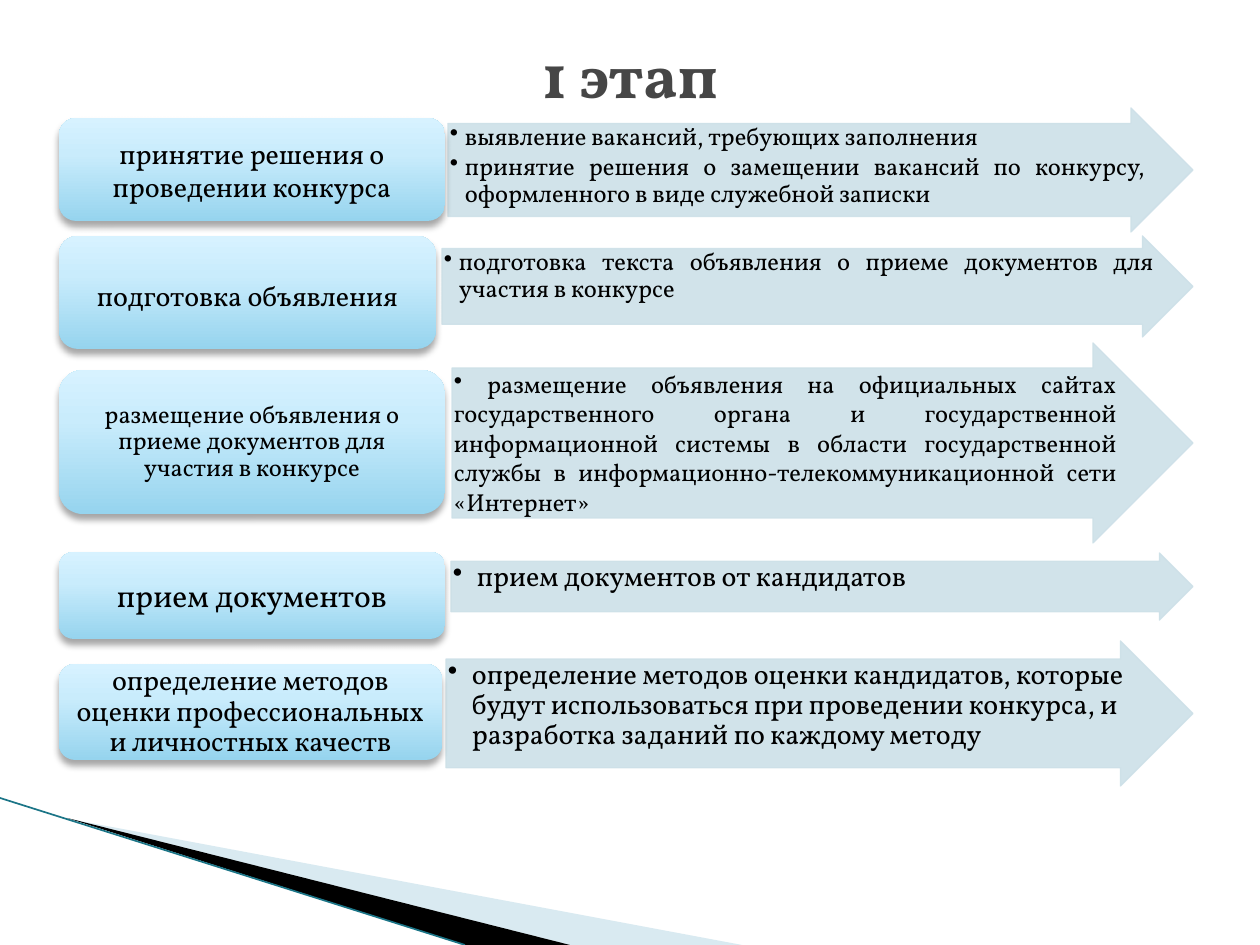
import pptx
import pptx.util
import pptx.dml.color
import pptx.enum.shapes
import pptx.enum.text
import pptx.oxml
from pptx.oxml.ns import nsdecls

PX = 914400 // 126
SLIDE = (1260, 945)
LEFT, RIGHT = 59, 1193  # shared left edge of labels, shared tip of arrows

THEME = dict(
    font="Vollkorn", text="000000", title="464646", title_size=36,
    arrow="CDE0E8", arrow_alpha=90,
    gradient=[(0, "96D4EE"), (65, "C9ECFC"), (100, "D7F2FF")],
    pale="A0CBDC", pale_alpha=40, dark="000000", edge="1B7587",
)

TITLE = "1 этап"
# label: text, size, top, width, height, line spacing, extra top inset
# arrow: paragraphs, size, left, top, height, hanging indent, line spacing, justified
STAGES = [
    (("принятие решения о проведении конкурса", 16, 118, 386, 103, 1, 1),
     (["выявление вакансий, требующих заполнения",
       "принятие решения о замещении вакансий по конкурсу, "
       "оформленного в виде служебной записки"], 14, 448, 108, 124, 15, 0.9, True)),
    (("подготовка объявления", 16, 236, 377, 113, 1, 5),
     (["подготовка текста объявления о приеме документов для участия в конкурсе"],
      14, 442, 236, 101, 15, 0.9, True)),
    (("размещение объявления о приеме документов для участия в конкурсе",
      14, 370, 386, 144, 0.9, 0),
     ([" размещение объявления на официальных сайтах государственного органа и "
       "государственной информационной системы в области государственной службы "
       "в информационно-телекоммуникационной сети «Интернет»"],
      14, 452, 343, 200, 0, 1, True)),
    (("прием документов", 18, 552, 386, 87, 0.9, 4),
     (["прием документов от кандидатов"], 16, 451, 553, 67, 24, 0.9, False)),
    (("определение методов оценки профессиональных и личностных качеств",
      16, 664, 383, 96, 0.9, 0),
     (["определение методов оценки кандидатов, которые будут использоваться "
       "при проведении конкурса, и разработка заданий по каждому методу"],
      16, 446, 641, 145, 24, 0.9, False)),
]
WEDGES = [
    ([(69, 819), (742, 945), (570, 945)], THEME["pale"], THEME["pale_alpha"]),
    ([(67, 818), (570, 945), (465, 945)], THEME["dark"], 100),
]
EDGE_LINE = [(0, 798), (465, 945)]

ALIGN = pptx.enum.text.PP_ALIGN
ANCHOR = pptx.enum.text.MSO_ANCHOR
SHAPE = pptx.enum.shapes.MSO_SHAPE


def emu(*values):
    return [round(v * PX) for v in values]


def rgb(code):
    return pptx.dml.color.RGBColor.from_string(code)


def xml(text):
    return pptx.oxml.parse_xml(text.replace(">", f" {nsdecls('a')}>", 1))


def paint(fill, color, alpha=100):
    fill.solid()
    fill.fore_color.rgb = rgb(color)
    if alpha < 100:
        clr = fill._xPr.find(".//" + pptx.oxml.ns.qn("a:srgbClr"))
        clr.append(xml(f'<a:alpha val="{alpha * 1000}"></a:alpha>'))


def write(sp, texts, size, color, insets, anchor, para, bold=False, hang=None):
    """Fill a frame; hang is the bullet indent in px, None for no bullets."""
    tf = sp.text_frame
    frame = dict(zip(("margin_left", "margin_top", "margin_right", "margin_bottom"),
                     emu(*insets)))
    for name, value in dict(frame, word_wrap=True, vertical_anchor=anchor).items():
        setattr(tf, name, value)
    for i, text in enumerate(texts):
        p = tf.add_paragraph() if i else tf.paragraphs[0]
        for name, value in para.items():
            setattr(p, name, value)
        if hang is not None:
            pPr = p._p.get_or_add_pPr()
            pPr.set("marL", str(hang * PX))
            pPr.set("indent", str(-hang * PX))
            pPr.append(xml('<a:buChar char="•"></a:buChar>'))
        r = p.add_run()
        r.text = text
        font = dict(name=THEME["font"], size=pptx.util.Pt(size), bold=bold)
        for name, value in font.items():
            setattr(r.font, name, value)
        r.font.color.rgb = rgb(color)


def add_arrow(s, texts, size, left, top, height, hang, spacing, justified):
    sp = s.shapes.add_shape(SHAPE.RIGHT_ARROW, *emu(left, top, RIGHT - left, height))
    sp.shadow.inherit = False
    sp.adjustments[0], sp.adjustments[1] = 0.75, 0.5
    paint(sp.fill, THEME["arrow"], THEME["arrow_alpha"])
    paint(sp.line.fill, THEME["arrow"], THEME["arrow_alpha"])
    sp.line.width = pptx.util.Pt(0.75)
    para = dict(alignment=ALIGN.JUSTIFY if justified else ALIGN.LEFT,
                line_spacing=spacing, space_after=pptx.util.Pt(2))
    write(sp, texts, size, THEME["text"], (2, 1, 1, 1), ANCHOR.TOP, para, hang=hang)


def add_label(s, text, size, top, width, height, spacing, drop):
    sp = s.shapes.add_shape(SHAPE.ROUNDED_RECTANGLE, *emu(LEFT, top, width, height))
    stops = "".join(f'<a:gs pos="{pos * 1000}"><a:srgbClr val="{c}"/></a:gs>'
                    for pos, c in THEME["gradient"])
    spPr = sp._element.spPr
    spPr.append(xml(f'<a:gradFill rotWithShape="1"><a:gsLst>{stops}</a:gsLst>'
                    '<a:lin ang="16200000" scaled="0"/></a:gradFill>'))
    sp.line.fill.background()
    spPr.append(xml('<a:effectLst><a:outerShdw blurRad="50800" dist="38100" '
                    'dir="5400000" rotWithShape="0"><a:srgbClr val="000000">'
                    '<a:alpha val="35000"/></a:srgbClr></a:outerShdw></a:effectLst>'))
    write(sp, [text], size, THEME["text"], (8, 4 + drop, 8, 4), ANCHOR.MIDDLE,
          dict(alignment=ALIGN.CENTER, line_spacing=spacing))


def add_corner(s):
    for points, color, alpha in WEDGES:
        fb = s.shapes.build_freeform(*points[0], scale=PX)
        fb.add_line_segments(points[1:], close=True)
        sp = fb.convert_to_shape()
        sp.shadow.inherit = False
        paint(sp.fill, color, alpha)
        sp.line.fill.background()
    (x1, y1), (x2, y2) = EDGE_LINE
    line = s.shapes.add_connector(pptx.enum.shapes.MSO_CONNECTOR.STRAIGHT,
                                  *emu(x1, y1, x2, y2))
    line.line.color.rgb = rgb(THEME["edge"])
    line.line.width = pptx.util.Pt(0.95)
    line._element.spPr.append(xml("<a:effectLst></a:effectLst>"))


def main():
    prs = pptx.Presentation()
    prs.slide_width, prs.slide_height = emu(*SLIDE)
    s = prs.slides.add_slide(prs.slide_layouts[6])
    add_corner(s)
    for label, arrow in STAGES:
        add_arrow(s, *arrow)
        add_label(s, *label)
    title = s.shapes.add_textbox(*emu(63, 38, 1134, 70))
    write(title, [TITLE], THEME["title_size"], THEME["title"], (12, 6, 12, 6),
          ANCHOR.MIDDLE, dict(alignment=ALIGN.CENTER), bold=True)
    prs.save("out.pptx")


if __name__ == "__main__":
    main()
